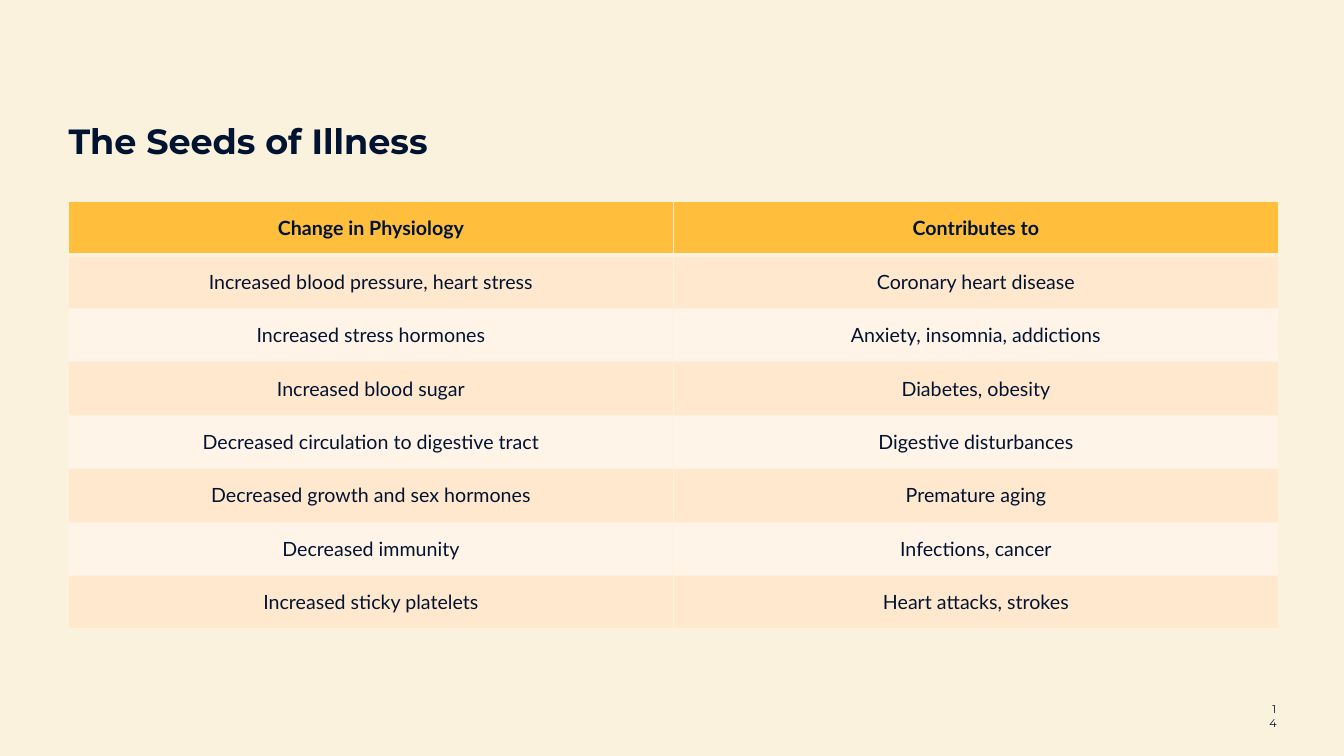
"""Build the slide that links physiological changes to the illnesses they feed."""
from dataclasses import dataclass

from lxml.etree import SubElement
from pptx import Presentation
from pptx.dml.color import RGBColor
from pptx.enum.text import MSO_ANCHOR, MSO_AUTO_SIZE, PP_ALIGN
from pptx.oxml.ns import qn
from pptx.util import Inches, Pt


@dataclass(frozen=True)
class Theme:
    page: str = "FBF2DE"
    ink: str = "001432"
    header: str = "FFBE3C"
    bands: tuple = ("FFE8CD", "FFF4E7")
    heading_font: str = "Montserrat"
    body_font: str = "Lato"
    title_size: int = 25
    table_size: int = 14
    number_size: int = 8
    thin_rule: int = 1
    header_rule: int = 3


class SlideBuilder:
    LEFT, TOP = 0.68, 2
    COLUMN, ROW = 1, 0.53

    def __init__(self, deck, theme):
        self.theme = theme
        self.slide = deck.slides.add_slide(deck.slide_layouts[6])
        backdrop = self.slide.background.fill
        backdrop.solid()
        backdrop.fore_color.rgb = RGBColor.from_string(theme.page)

    def box(self, column, row, columns, rows):
        return (
            Inches(self.LEFT + column * self.COLUMN),
            Inches(self.TOP + row * self.ROW),
            Inches(columns * self.COLUMN),
            Inches(rows * self.ROW),
        )

    def style(self, paragraph, font_name, size, bold=False, align=PP_ALIGN.LEFT):
        paragraph.alignment = align
        font = paragraph.font
        font.name, font.size, font.bold = font_name, Pt(size), bold
        font.color.rgb = RGBColor.from_string(self.theme.ink)

    def text(self, wording, area, size, grow=False, spacing=None, **looks):
        frame = self.slide.shapes.add_textbox(*self.box(*area)).text_frame
        frame.word_wrap = True
        frame.auto_size = MSO_AUTO_SIZE.SHAPE_TO_FIT_TEXT if grow else MSO_AUTO_SIZE.NONE
        frame.margin_left = frame.margin_right = frame.margin_top = frame.margin_bottom = 0
        frame.text = wording
        paragraph = frame.paragraphs[0]
        if spacing:
            paragraph.line_spacing = spacing
        self.style(paragraph, self.theme.heading_font, size, **looks)

    def border(self, cell, side, width):
        rule = SubElement(cell._tc.get_or_add_tcPr(), qn(f"a:ln{side}"), w=str(Pt(width)))
        paint = SubElement(rule, qn("a:solidFill"))
        SubElement(paint, qn("a:srgbClr"), val=self.theme.page)

    def table(self, records, column, row, columns):
        theme = self.theme
        area = self.box(column, row, columns, len(records))
        grid = self.slide.shapes.add_table(len(records), len(records[0]), *area).table
        for line, record in enumerate(records):
            grid.rows[line].height = Inches(self.ROW)
            is_header = line == 0
            color = theme.header if is_header else theme.bands[(line - 1) % 2]
            heavy_side = {0: "B", 1: "T"}.get(line)
            for position, wording in enumerate(record):
                cell = grid.cell(line, position)
                for side in "LRTB":
                    width = theme.header_rule if side == heavy_side else theme.thin_rule
                    self.border(cell, side, width)
                cell.fill.solid()
                cell.fill.fore_color.rgb = RGBColor.from_string(color)
                cell.vertical_anchor = MSO_ANCHOR.MIDDLE
                cell.text = wording
                self.style(cell.text_frame.paragraphs[0], theme.body_font,
                           theme.table_size, is_header, PP_ALIGN.CENTER)


ILLNESS_SEEDS = [
    ("Change in Physiology", "Contributes to"),
    ("Increased blood pressure, heart stress", "Coronary heart disease"),
    ("Increased stress hormones", "Anxiety, insomnia, addictions"),
    ("Increased blood sugar", "Diabetes, obesity"),
    ("Decreased circulation to digestive tract", "Digestive disturbances"),
    ("Decreased growth and sex hormones", "Premature aging"),
    ("Decreased immunity", "Infections, cancer"),
    ("Increased sticky platelets", "Heart attacks, strokes"),
]


def main():
    deck = Presentation()
    deck.slide_width, deck.slide_height = Inches(13.33), Inches(7.5)
    theme = Theme()
    page = SlideBuilder(deck, theme)
    page.text("14", (11.91, 9.38, 0.07, 0.25), theme.number_size,
              grow=True, align=PP_ALIGN.RIGHT)
    page.table(ILLNESS_SEEDS, column=0, row=0, columns=12)
    page.text("The Seeds of Illness", (0, -1.7, 11, 1.5), theme.title_size,
              spacing=1.2, bold=True)
    deck.save("out.pptx")


if __name__ == "__main__":
    main()
